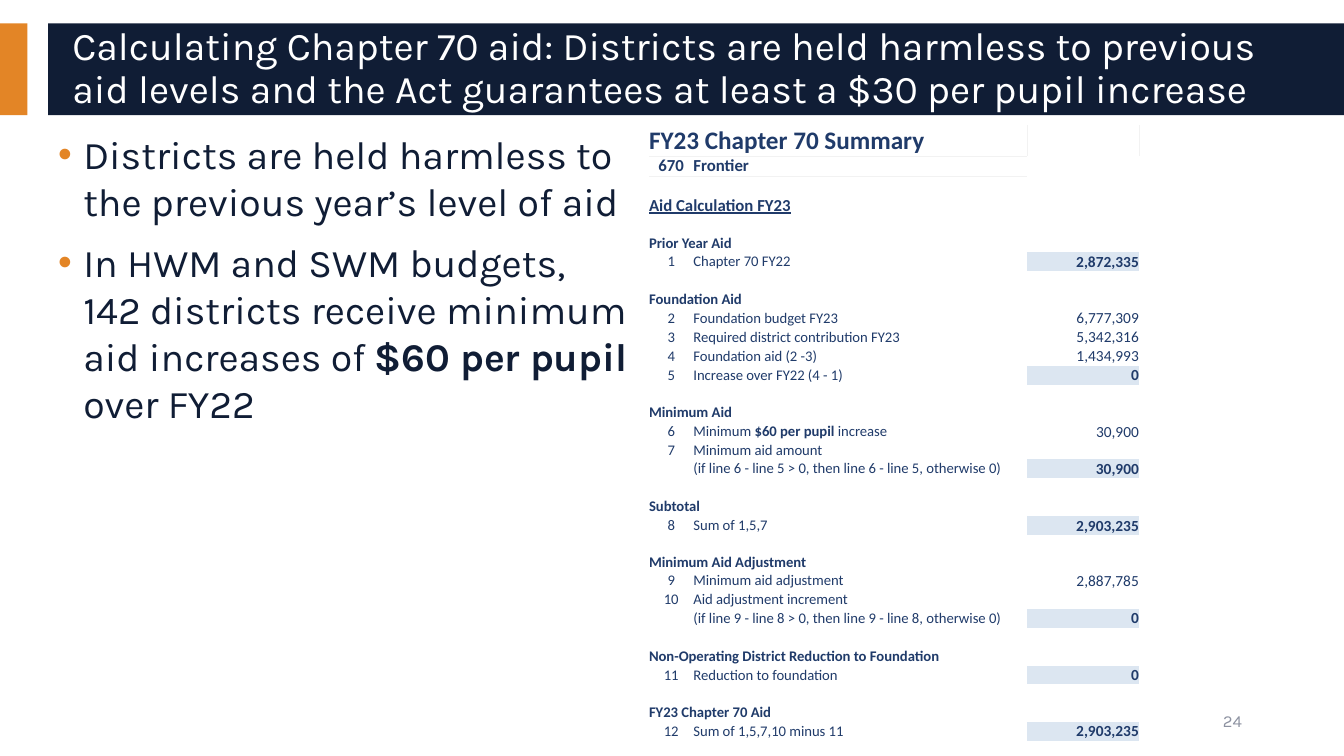
from lxml.etree import SubElement
from pptx import Presentation
from pptx.dml.color import RGBColor
from pptx.enum.shapes import MSO_SHAPE
from pptx.enum.text import MSO_ANCHOR, PP_ALIGN
from pptx.oxml.ns import qn
from pptx.util import Pt

NAVY = RGBColor(0x10, 0x1D, 0x35)
ORANGE = RGBColor(0xE3, 0x85, 0x26)
WHITE = RGBColor(0xFF, 0xFF, 0xFF)
GREY = RGBColor(0x8D, 0x92, 0xA1)
TABLE_BLUE = RGBColor(0x20, 0x3B, 0x6A)
TOTAL_FILL = RGBColor(0xDC, 0xE6, 0xF1)
RULE_GREY = RGBColor(0xF2, 0xF2, 0xF2)

TITLE = ("Calculating Chapter 70 aid: Districts are held harmless to previous "
         "aid levels and the Act guarantees at least a $30 per pupil increase")
BULLETS = [
    "Districts are held harmless to the previous year’s level of aid",
    "In HWM and SWM budgets, \n142 districts receive minimum aid increases of "
    "**$60 per pupil **over FY22",
]

BLANK_ROW = ("", "", "")
AID_ROWS = [
    ("FY23 Chapter 70 Summary",),
    ("**670**", "**Frontier**", ""),
    BLANK_ROW,
    ("Aid Calculation FY23",),
    BLANK_ROW,
    ("Prior Year Aid",),
    ("1", "Chapter 70 FY22", "**2,872,335**"),
    BLANK_ROW,
    ("Foundation Aid",),
    ("2", "Foundation budget FY23", "6,777,309"),
    ("3", "Required district contribution FY23", "5,342,316"),
    ("4", "Foundation aid (2 -3)", "1,434,993"),
    ("5", "Increase over FY22 (4 - 1)", "**0**"),
    BLANK_ROW,
    ("Minimum Aid",),
    ("6", "Minimum **$60 per pupil** increase", "30,900"),
    ("7", "Minimum aid amount", ""),
    ("", "(if line 6 - line 5 > 0, then line 6 - line 5, otherwise 0)", "**30,900**"),
    BLANK_ROW,
    ("Subtotal",),
    ("8", "Sum of 1,5,7", "**2,903,235**"),
    BLANK_ROW,
    ("Minimum Aid Adjustment",),
    ("9", "Minimum aid adjustment", "2,887,785"),
    ("10", "Aid adjustment increment", ""),
    ("", "(if line 9 - line 8 > 0, then line 9 - line 8, otherwise 0)", "**0**"),
    BLANK_ROW,
    ("Non-Operating District Reduction to Foundation",),
    ("11", "Reduction to foundation", "**0**"),
    BLANK_ROW,
    ("FY23 Chapter 70 Aid",),
    ("12", "Sum of 1,5,7,10 minus 11", "**2,903,235**"),
]
COLUMN_WIDTHS = (31.7, 238.3, 80)
ROW_HEIGHT = 13.45
ROW_HEIGHTS = {0: 22, 1: 14.6, 3: 14.6, 5: 12.8, 10: 14, 16: 13, 19: 14, 21: 12.5}
ROW_SIZES = {0: 18, 1: 12, 3: 12}
ALIGNMENTS = (PP_ALIGN.CENTER, PP_ALIGN.LEFT, PP_ALIGN.RIGHT)
NO_STYLE = "{2D5ABB26-0587-4C30-8999-92F81FD0307C}"


def set_attributes(target, values):
    for name, value in values.items():
        setattr(target, name, value)


def write(paragraph, text, color, **font_values):
    for part, words in enumerate(text.split("**")):
        for line, piece in enumerate(words.split("\n")):
            if line:
                paragraph.add_line_break()
            if piece:
                run = paragraph.add_run()
                run.text = piece
                set_attributes(run.font, {"bold": part % 2 == 1, **font_values})
                run.font.color.rgb = color


def add_block(slide, box, color):
    shape = slide.shapes.add_shape(MSO_SHAPE.RECTANGLE, *map(Pt, box))
    shape.shadow.inherit = False
    shape.fill.solid()
    shape.fill.fore_color.rgb = color
    shape.line.fill.background()


def add_text_frame(slide, box, anchor):
    frame = slide.shapes.add_textbox(*map(Pt, box)).text_frame
    set_attributes(frame, {"word_wrap": True, "vertical_anchor": anchor})
    return frame


def add_title_band(slide, box):
    left, top, width, height = box
    add_block(slide, (0, top, 19.6, height), ORANGE)
    add_block(slide, box, NAVY)
    text_box = (left + 10.3, top + 6.2, width - 25.7, height - 12.4)
    paragraph = add_text_frame(slide, text_box, MSO_ANCHOR.MIDDLE).paragraphs[0]
    paragraph.line_spacing = 0.9
    write(paragraph, TITLE, WHITE, name="Karla", size=Pt(28))


def add_bullets(slide, box):
    frame = add_text_frame(slide, box, MSO_ANCHOR.TOP)
    for index, text in enumerate(BULLETS):
        paragraph = frame.add_paragraph() if index else frame.paragraphs[0]
        paragraph.space_before = Pt(10)
        properties = paragraph._p.get_or_add_pPr()
        properties.set("marL", str(Pt(18)))
        properties.set("indent", str(Pt(-18)))
        bullet_color = SubElement(properties, qn("a:buClr"))
        SubElement(bullet_color, qn("a:srgbClr"), val=str(ORANGE))
        SubElement(properties, qn("a:buFont"), typeface="Arial")
        SubElement(properties, qn("a:buChar"), char="•")
        write(paragraph, text, NAVY, name="Karla", size=Pt(28))


def add_borders(cell, sides):
    properties = cell._tc.get_or_add_tcPr()
    for position, side in enumerate(sides):
        line = SubElement(properties, qn(f"a:ln{side}"), w=str(Pt(0.25)))
        fill = SubElement(line, qn("a:solidFill"))
        SubElement(fill, qn("a:srgbClr"), val=str(RULE_GREY))
        properties.insert(position, line)


def fill_cell(cell, text, size, alignment, **font_values):
    set_attributes(cell, {
        "margin_left": 0, "margin_right": 0, "margin_top": 0, "margin_bottom": 0,
        "vertical_anchor": MSO_ANCHOR.MIDDLE,
    })
    cell.fill.solid()
    is_total = alignment == PP_ALIGN.RIGHT and text.startswith("**")
    cell.fill.fore_color.rgb = TOTAL_FILL if is_total else WHITE
    paragraph = cell.text_frame.paragraphs[0]
    paragraph.alignment = alignment
    write(paragraph, text, TABLE_BLUE, name="Calibri", size=Pt(size), **font_values)
    if not text:
        SubElement(paragraph._p, qn("a:endParaRPr"), sz="800")


def add_aid_table(slide, left, top):
    heights = [ROW_HEIGHTS.get(index, ROW_HEIGHT) for index in range(len(AID_ROWS))]
    box = (left, top, sum(COLUMN_WIDTHS), sum(heights))
    table = slide.shapes.add_table(len(AID_ROWS), 3, *map(Pt, box)).table
    set_attributes(table, {"first_row": False, "horz_banding": False})
    table._tbl.tblPr.find(qn("a:tableStyleId")).text = NO_STYLE
    for column, width in zip(table.columns, COLUMN_WIDTHS):
        column.width = Pt(width)
    for index, (texts, height) in enumerate(zip(AID_ROWS, heights)):
        table.rows[index].height = Pt(height)
        size = ROW_SIZES.get(index, 10.5)
        if len(texts) == 1:
            heading = table.cell(index, 0)
            heading.merge(table.cell(index, 1))
            fill_cell(heading, texts[0], size, PP_ALIGN.LEFT, bold=True, underline=index == 3)
            fill_cell(table.cell(index, 1), "", size, PP_ALIGN.LEFT)
            fill_cell(table.cell(index, 2), "", size, PP_ALIGN.RIGHT)
        else:
            for column, (text, alignment) in enumerate(zip(texts, ALIGNMENTS)):
                fill_cell(table.cell(index, column), text, 11 if column == 2 else size, alignment)
    table.cell(0, 0).vertical_anchor = MSO_ANCHOR.TOP
    for row, column, sides in ((0, 0, "RB"), (0, 1, "RB"), (0, 2, "L"), (1, 0, "T"), (1, 1, "T")):
        add_borders(table.cell(row, column), sides)


def add_page_number(slide, box):
    paragraph = add_text_frame(slide, box, MSO_ANCHOR.MIDDLE).paragraphs[0]
    paragraph.alignment = PP_ALIGN.RIGHT
    write(paragraph, "24", GREY, name="Karla", size=Pt(12))


def main():
    presentation = Presentation()
    set_attributes(presentation, {"slide_width": Pt(960), "slide_height": Pt(540)})
    slide = presentation.slides.add_slide(presentation.slide_layouts[6])
    add_title_band(slide, (34.4, 16.7, 925.6, 65.5))
    add_bullets(slide, (34.4, 89.3, 429.1, 382.3))
    add_page_number(slide, (678.2, 500.4, 216, 28.8))
    add_aid_table(slide, 463.6, 89.3)
    presentation.save("out.pptx")


if __name__ == "__main__":
    main()
